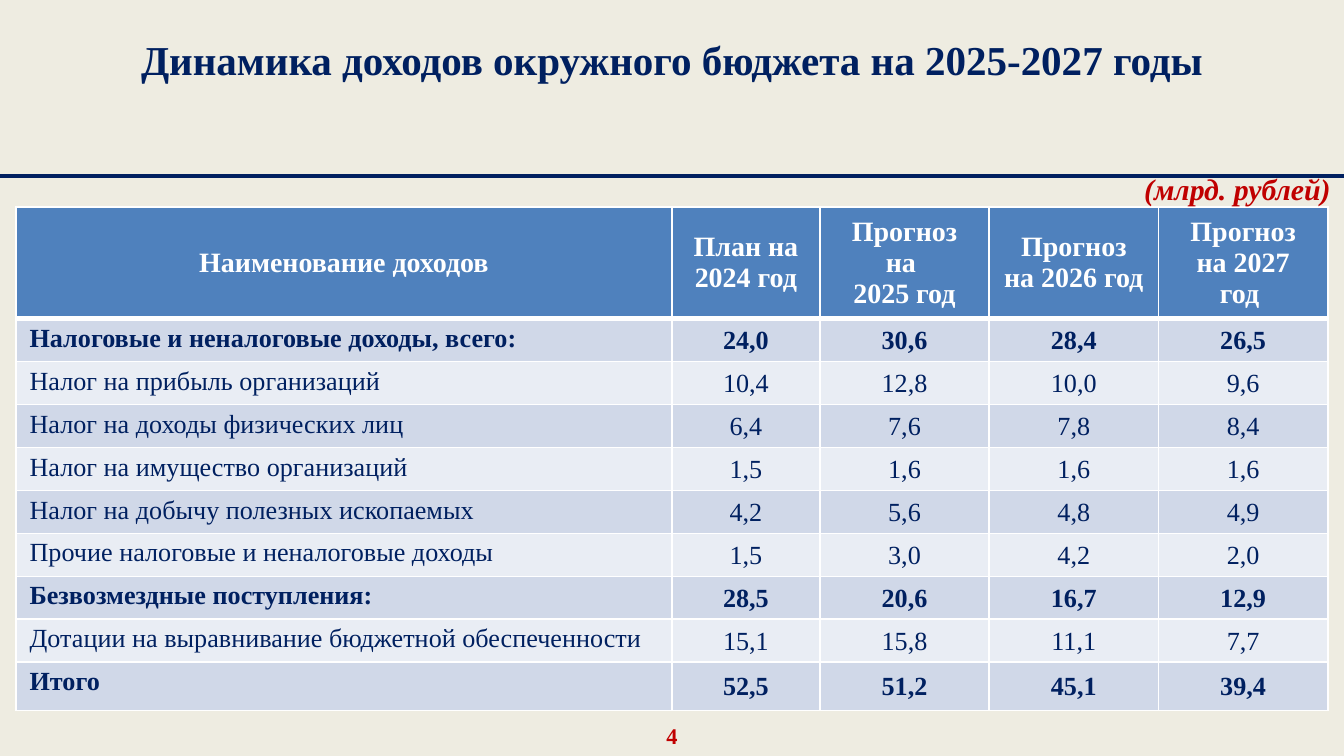
from dataclasses import dataclass
from typing import NamedTuple

from lxml.etree import SubElement
from pptx import Presentation
from pptx.dml.color import RGBColor
from pptx.enum.shapes import MSO_CONNECTOR
from pptx.enum.text import MSO_ANCHOR, PP_ALIGN
from pptx.oxml import parse_xml
from pptx.oxml.ns import nsdecls, qn
from pptx.presentation import Presentation as Deck
from pptx.slide import Slide
from pptx.table import _Cell as Cell
from pptx.text.text import TextFrame
from pptx.util import Inches, Pt


@dataclass(frozen=True)
class Theme:
    font: str = "Times New Roman"
    background: str = "EEECE1"
    navy: str = "002060"
    red: str = "C00000"
    white: str = "FFFFFF"
    header: str = "4F81BD"
    bands: tuple[str, str] = ("D0D8E8", "E9EDF4")
    title_size: int = 22
    unit_size: int = 16
    header_size: int = 15
    body_size: int = 14
    number_size: int = 12
    rule_width: int = 2
    border_width: int = 1
    header_border_width: int = 3


@dataclass(frozen=True)
class Grid:
    width: float = 10
    height: float = 10 * 9 / 16
    columns: float = 1000
    rows: float = 562.5

    def x(self, columns: float) -> int:
        return Inches(self.width * columns / self.columns)

    def y(self, rows: float) -> int:
        return Inches(self.height * rows / self.rows)


class Area(NamedTuple):
    column: float
    row: float
    columns: float
    rows: float


class Insets(NamedTuple):
    left: float
    top: float
    right: float
    bottom: float


class TextStyle(NamedTuple):
    size: int
    color: str
    bold: bool = True
    italic: bool = False
    alignment: PP_ALIGN = PP_ALIGN.CENTER
    line_spacing: float = 1.0


class Income(NamedTuple):
    name: str
    amounts: tuple[str, ...]
    total: bool = False


THEME = Theme()
GRID = Grid()
BOX_INSETS = Insets(0.1, 0.05, 0.1, 0.05)
TITLE_INSETS = Insets(0.1, 0.05, 0.19, 0.43)
LABEL_INSETS = Insets(0.1, 0.04, 0.1, 0.04)
AMOUNT_INSETS = Insets(0.01, 0.01, 0.01, 0)

RULE_ROW = 131
TABLE_AREA = Area(12, 154, 976, 350)
COLUMN_SPANS = (488, 110, 126, 126, 126)
HEADER_ROWS, BODY_ROWS, LAST_ROWS = 58, 32, 36

HARD_SPACE = chr(160)
HEADERS = (
    "Наименование доходов",
    "План на 2024 год",
    f"Прогноз на{HARD_SPACE}\n2025 год",
    f"Прогноз на{HARD_SPACE}2026 год",
    f"Прогноз на 2027 год{HARD_SPACE}",
)
INCOMES = (
    Income("Налоговые и неналоговые доходы, всего:", ("24,0", "30,6", "28,4", "26,5"), True),
    Income("Налог на прибыль организаций", ("10,4", "12,8", "10,0", "9,6")),
    Income("Налог на доходы физических лиц", ("6,4", "7,6", "7,8", "8,4")),
    Income("Налог на имущество организаций", ("1,5", "1,6", "1,6", "1,6")),
    Income("Налог на добычу полезных ископаемых", ("4,2", "5,6", "4,8", "4,9")),
    Income("Прочие налоговые и неналоговые доходы", ("1,5", "3,0", "4,2", "2,0")),
    Income("Безвозмездные поступления:", ("28,5", "20,6", "16,7", "12,9"), True),
    Income("Дотации на выравнивание бюджетной обеспеченности", ("15,1", "15,8", "11,1", "7,7")),
    Income("Итого", ("52,5", "51,2", "45,1", "39,4"), True),
)


def write_text(frame: TextFrame, text: str, style: TextStyle) -> None:
    frame.text = text
    for paragraph in frame.paragraphs:
        paragraph.alignment = style.alignment
        paragraph.line_spacing = style.line_spacing
        paragraph.font.name = THEME.font
        paragraph.font.size = Pt(style.size)
        paragraph.font.bold = style.bold
        paragraph.font.italic = style.italic
        paragraph.font.color.rgb = RGBColor.from_string(style.color)


def set_insets(target: TextFrame | Cell, insets: Insets) -> None:
    target.margin_left = Inches(insets.left)
    target.margin_top = Inches(insets.top)
    target.margin_right = Inches(insets.right)
    target.margin_bottom = Inches(insets.bottom)


def add_text(slide: Slide, area: Area, text: str, style: TextStyle, insets: Insets = BOX_INSETS) -> None:
    shape = slide.shapes.add_textbox(
        GRID.x(area.column), GRID.y(area.row), GRID.x(area.columns), GRID.y(area.rows)
    )
    frame = shape.text_frame
    frame.word_wrap = True
    frame.vertical_anchor = MSO_ANCHOR.MIDDLE
    set_insets(frame, insets)
    write_text(frame, text, style)


def add_rule(slide: Slide, row: float) -> None:
    rule = slide.shapes.add_connector(
        MSO_CONNECTOR.STRAIGHT, 0, GRID.y(row), GRID.x(GRID.columns), GRID.y(row)
    )
    rule.line.color.rgb = RGBColor.from_string(THEME.navy)
    rule.line.width = Pt(THEME.rule_width)
    SubElement(rule._element.spPr, qn("a:effectLst"))


def set_borders(cell: Cell, top: int, bottom: int) -> None:
    properties = cell._tc.get_or_add_tcPr()
    widths = {"L": THEME.border_width, "R": THEME.border_width, "T": top, "B": bottom}
    for position, (side, width) in enumerate(widths.items()):
        border = parse_xml(
            f'<a:ln{side} {nsdecls("a")} w="{Pt(width)}"><a:solidFill>'
            f'<a:srgbClr val="{THEME.white}"/></a:solidFill></a:ln{side}>'
        )
        properties.insert(position, border)


def fill_cell(
    cell: Cell, text: str, style: TextStyle, color: str, insets: Insets, anchor: MSO_ANCHOR
) -> None:
    cell.fill.solid()
    cell.fill.fore_color.rgb = RGBColor.from_string(color)
    cell.vertical_anchor = anchor
    set_insets(cell, insets)
    write_text(cell.text_frame, text, style)


def add_income_table(slide: Slide, area: Area) -> None:
    table = slide.shapes.add_table(
        len(INCOMES) + 1, len(HEADERS),
        GRID.x(area.column), GRID.y(area.row), GRID.x(area.columns), GRID.y(area.rows),
    ).table
    for column, span in zip(table.columns, COLUMN_SPANS):
        column.width = GRID.x(span)
    row_spans = (HEADER_ROWS, *[BODY_ROWS] * (len(INCOMES) - 1), LAST_ROWS)
    for row, span in zip(table.rows, row_spans):
        row.height = GRID.y(span)

    thin, thick = THEME.border_width, THEME.header_border_width
    header_style = TextStyle(THEME.header_size, THEME.white)
    for cell, text in zip(table.rows[0].cells, HEADERS):
        fill_cell(cell, text, header_style, THEME.header, LABEL_INSETS, MSO_ANCHOR.MIDDLE)
        set_borders(cell, thin, thick)

    for index, income in enumerate(INCOMES):
        cells = list(table.rows[index + 1].cells)
        color = THEME.bands[index % len(THEME.bands)]
        amount_style = TextStyle(THEME.body_size, THEME.navy, income.total)
        name_style = amount_style._replace(alignment=PP_ALIGN.LEFT)
        fill_cell(cells[0], income.name, name_style, color, LABEL_INSETS, MSO_ANCHOR.TOP)
        for cell, amount in zip(cells[1:], income.amounts):
            fill_cell(cell, amount, amount_style, color, AMOUNT_INSETS, MSO_ANCHOR.MIDDLE)
        for cell in cells:
            set_borders(cell, thick if index == 0 else thin, thin)


def build_presentation() -> Deck:
    presentation = Presentation()
    presentation.slide_width = GRID.x(GRID.columns)
    presentation.slide_height = GRID.y(GRID.rows)
    slide = presentation.slides.add_slide(presentation.slide_layouts[6])
    slide.background.fill.solid()
    slide.background.fill.fore_color.rgb = RGBColor.from_string(THEME.background)

    add_text(slide, Area(0, 533, 1000, 29), "4", TextStyle(THEME.number_size, THEME.red))
    title_style = TextStyle(THEME.title_size, THEME.navy, line_spacing=0.91)
    title = "Динамика доходов окружного бюджета на 2025-2027 годы"
    add_text(slide, Area(20, 0, 969, RULE_ROW), title, title_style, TITLE_INSETS)
    add_rule(slide, RULE_ROW)
    add_income_table(slide, TABLE_AREA)
    unit_style = TextStyle(THEME.unit_size, THEME.red, italic=True, alignment=PP_ALIGN.RIGHT)
    add_text(slide, Area(831, 122, 169, 37), "(млрд. рублей)", unit_style)
    return presentation


if __name__ == "__main__":
    build_presentation().save("out.pptx")
